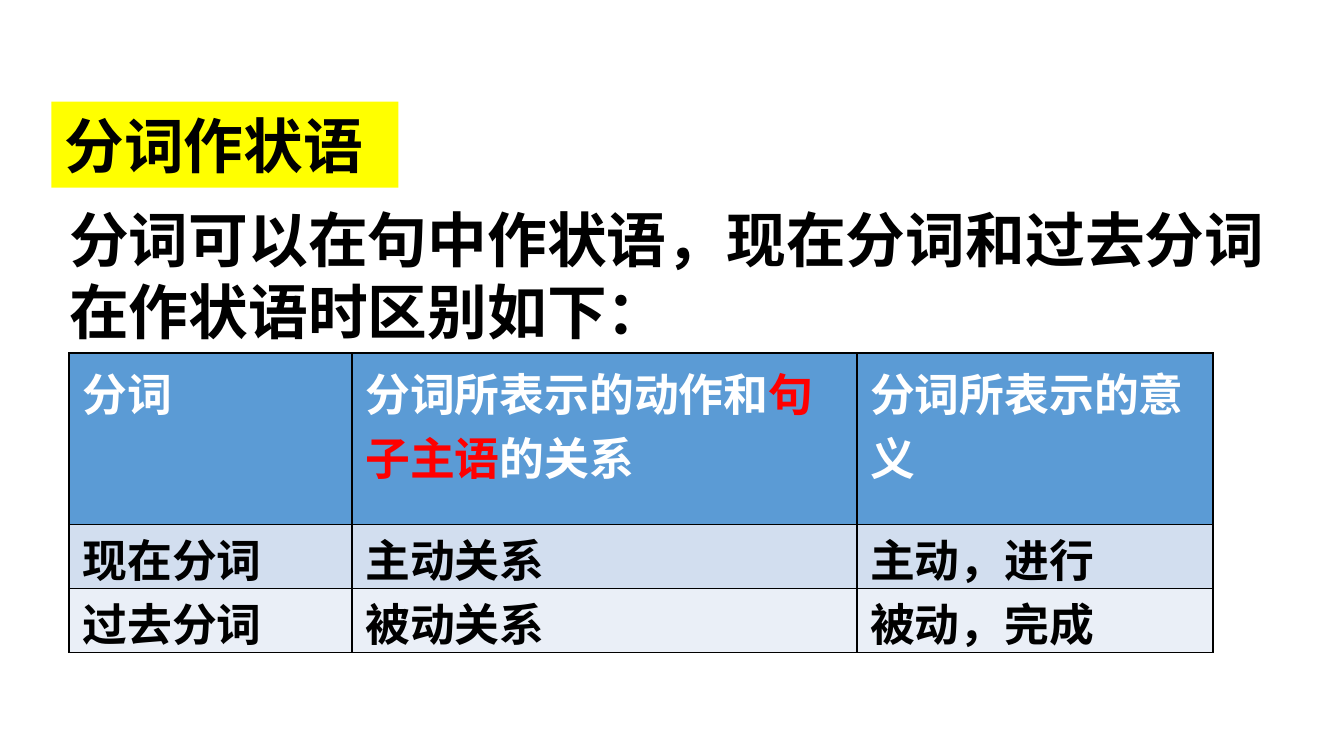
"""Build a slide on participles used as adverbials."""
from lxml import etree
from pptx import Presentation
from pptx.dml.color import RGBColor
from pptx.enum.shapes import MSO_SHAPE
from pptx.enum.text import MSO_ANCHOR, PP_ALIGN
from pptx.oxml.ns import qn
from pptx.util import Pt

RECTANGLE = MSO_SHAPE.RECTANGLE
TOP = MSO_ANCHOR.TOP
LEFT = PP_ALIGN.LEFT
BLACK = RGBColor(0x00, 0x00, 0x00)
WHITE = RGBColor(0xFF, 0xFF, 0xFF)
RED = RGBColor(0xFF, 0x00, 0x00)
YELLOW = RGBColor(0xFF, 0xFF, 0x00)
BLUE = RGBColor(0x5B, 0x9B, 0xD5)
LIGHT_BLUE = RGBColor(0xD2, 0xDE, 0xEF)
PALE_BLUE = RGBColor(0xEA, 0xEF, 0xF7)


def add_text(para, text, size=24, font="Calibri", color=BLACK):
    span = para.add_run()
    span.text = text
    span.font.size = Pt(size)
    span.font.name = font
    span.font.bold = True
    span.font.color.rgb = color
    east_asian = etree.SubElement(span.font._element, qn("a:ea"))
    east_asian.set("typeface", "Calibri")


def add_borders(cell, width=1):
    properties = cell._tc.get_or_add_tcPr()
    for index, side in enumerate(("lnL", "lnR", "lnT", "lnB")):
        line = etree.Element(qn(f"a:{side}"), w=str(Pt(width)))
        fill = etree.SubElement(line, qn("a:solidFill"))
        etree.SubElement(fill, qn("a:srgbClr"), val=str(BLACK))
        properties.insert(index, line)


deck = Presentation()
deck.slide_width = Pt(720)
deck.slide_height = Pt(405)
page = deck.slides.add_slide(deck.slide_layouts[6])

title = page.shapes.add_shape(RECTANGLE, Pt(27.5), Pt(54.5), Pt(186), Pt(46))
title.shadow.inherit = False
title.fill.solid()
title.fill.fore_color.rgb = YELLOW
title.line.fill.background()
intro = page.shapes.add_textbox(Pt(30), Pt(105), Pt(657), Pt(85))
for box, text in (
    (title, "分词作状语"),
    (intro, "分词可以在句中作状语，现在分词和过去分词在作状语时区别如下："),
):
    frame = box.text_frame
    frame.word_wrap = True
    frame.vertical_anchor = TOP
    frame.paragraphs[0].alignment = LEFT
    add_text(frame.paragraphs[0], text, size=32, font="Times New Roman")

column_widths = (151.5, 270.5, 191)
rows = (
    (92, 3.5, BLUE, WHITE, ("分词", "分词所表示的动作和|句子主语|的关系", "分词所表示的意义")),
    (34.25, 0.5, LIGHT_BLUE, BLACK, ("现在分词", "主动关系", "主动，进行")),
    (34.25, 0.5, PALE_BLUE, BLACK, ("过去分词", "被动关系", "被动，完成")),
)
table = page.shapes.add_table(
    len(rows), len(column_widths), Pt(37), Pt(189),
    Pt(sum(column_widths)), Pt(sum(row[0] for row in rows)),
).table
for column, width in zip(table.columns, column_widths):
    column.width = Pt(width)
for row, (height, top_margin, fill_color, text_color, texts) in zip(table.rows, rows):
    row.height = Pt(height)
    for cell, text in zip(row.cells, texts):
        cell.fill.solid()
        cell.fill.fore_color.rgb = fill_color
        cell.margin_top = Pt(top_margin)
        cell.margin_bottom = Pt(0)
        add_borders(cell)
        para = cell.text_frame.paragraphs[0]
        para.line_spacing = 1.17
        for index, part in enumerate(text.split("|")):
            add_text(para, part, color=RED if index == 1 else text_color)

deck.save("out.pptx")
